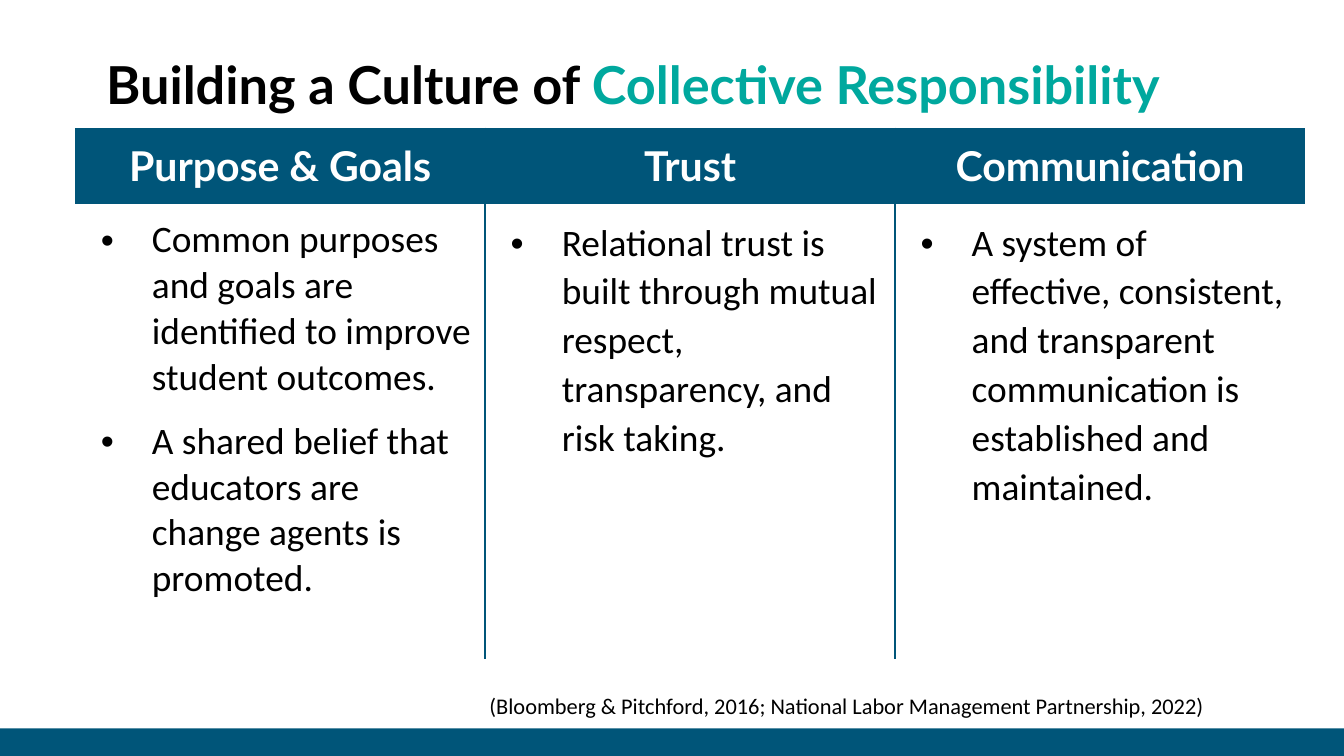
from lxml.etree import SubElement
from pptx import Presentation
from pptx.dml.color import RGBColor
from pptx.enum.shapes import MSO_SHAPE
from pptx.enum.text import MSO_ANCHOR, PP_ALIGN
from pptx.oxml.ns import qn
from pptx.util import Inches, Pt

TITLE = [("Building a Culture of ", "black"), ("Collective Responsibility", "teal")]
COLUMNS = [
    {"head": "Purpose & Goals", "spacing": None, "points": [
        "Common purposes and goals are identified to improve student outcomes.",
        "A shared belief that educators are change agents is promoted."]},
    {"head": "Trust", "spacing": 1.07, "points": [
        "Relational trust is built through mutual respect, transparency, and risk taking."]},
    {"head": "Communication", "spacing": 1.07, "points": [
        "A system of effective, consistent, and transparent communication is "
        "established and maintained."]},
]
CITATION = "(Bloomberg & Pitchford, 2016; National Labor Management Partnership, 2022)"

THEME = {
    "black": "000000", "white": "FFFFFF", "blue": "005579", "teal": "00A89E",
    "head_font": "Lato", "body_font": "Calibri",
    "title": 28, "head": 22, "body": 20, "citation": 12,
}
PLAIN_TABLE = "{2D5ABB26-0587-4C30-8999-92F81FD0307C}"
MARGIN = Inches(0.1)
COL_W, ROW_HEIGHTS = 3.05, (0.53, 3.39)


def rgb(name):
    return RGBColor.from_string(THEME[name])


def style(r, size, color="black", font="body_font", bold=False):
    r.font.name = THEME[font]
    r.font.size = Pt(THEME[size])
    r.font.bold = bold
    r.font.color.rgb = rgb(color)


def set_margins(box):
    box.margin_left = box.margin_right = box.margin_top = box.margin_bottom = MARGIN


def add_bullet(p):
    pPr = p._p.get_or_add_pPr()
    pPr.set("marL", str(Inches(0.47)))
    pPr.set("indent", str(Inches(-0.38)))
    SubElement(SubElement(pPr, qn("a:buClr")), qn("a:srgbClr"), val=THEME["black"])
    SubElement(pPr, qn("a:buFont"), typeface="Arial")
    SubElement(pPr, qn("a:buChar"), char="•")


def add_borders(cell, sides):
    tcPr = cell._tc.get_or_add_tcPr()
    for side in sides:
        ln = SubElement(tcPr, qn(f"a:ln{side}"), w=str(Pt(1)))
        SubElement(SubElement(ln, qn("a:solidFill")), qn("a:srgbClr"), val=THEME["blue"])


def add_footer_bar(s):
    bar = s.shapes.add_shape(MSO_SHAPE.RECTANGLE, 0, Inches(5.42), Inches(10), Inches(0.21))
    bar.shadow.inherit = False
    bar.fill.solid()
    bar.fill.fore_color.rgb = rgb("blue")
    bar.line.fill.background()


def add_title(s):
    title = s.shapes.title
    title.left, title.top = Inches(0.69), Inches(0.3)
    title.width, title.height = Inches(9.15), Inches(0.65)
    tf = title.text_frame
    set_margins(tf)
    tf.vertical_anchor = MSO_ANCHOR.MIDDLE
    p = tf.paragraphs[0]
    p.alignment = PP_ALIGN.LEFT
    for text, color in TITLE:
        r = p.add_run()
        r.text = text
        style(r, "title", color, "head_font", True)


def fill_head(cell, text):
    cell.fill.solid()
    cell.fill.fore_color.rgb = rgb("blue")
    cell.text_frame.text = text
    p = cell.text_frame.paragraphs[0]
    p.alignment = PP_ALIGN.CENTER
    style(p.runs[0], "head", "white", "head_font", True)


def fill_body(cell, points, spacing):
    cell.fill.background()
    cell.text_frame.text = "\n".join(points)
    for i, p in enumerate(cell.text_frame.paragraphs):
        p.line_spacing = spacing
        p.space_before = Pt(10 if i else 0)
        add_bullet(p)
        style(p.runs[0], "body")


def add_columns(s):
    n = len(COLUMNS)
    frame = s.shapes.add_table(2, n, Inches(0.56), Inches(0.95),
                               Inches(n * COL_W), Inches(sum(ROW_HEIGHTS)))
    table = frame.table
    table.horz_banding = table.first_row = False
    table._tbl.tblPr.find(qn("a:tableStyleId")).text = PLAIN_TABLE
    for row, height in zip(table.rows, ROW_HEIGHTS):
        row.height = Inches(height)
    for c, column in enumerate(COLUMNS):
        table.columns[c].width = Inches(COL_W)
        sides = ("L" if c > 0 else "") + ("R" if c < n - 1 else "")
        head, body = table.cell(0, c), table.cell(1, c)
        for cell in (head, body):
            set_margins(cell)
            add_borders(cell, sides)
        fill_head(head, column["head"])
        fill_body(body, column["points"], column["spacing"])


def add_citation(s):
    tf = s.shapes.add_textbox(Inches(0.49), Inches(5.1), Inches(8.57), Inches(0.3)).text_frame
    tf.word_wrap = True
    tf.text = CITATION
    p = tf.paragraphs[0]
    p.alignment = PP_ALIGN.RIGHT
    style(p.runs[0], "citation")


def main():
    prs = Presentation()
    prs.slide_width = Inches(10)
    prs.slide_height = prs.slide_width * 9 // 16
    s = prs.slides.add_slide(prs.slide_layouts[5])
    add_footer_bar(s)
    add_title(s)
    add_columns(s)
    add_citation(s)
    prs.save("out.pptx")


if __name__ == "__main__":
    main()
